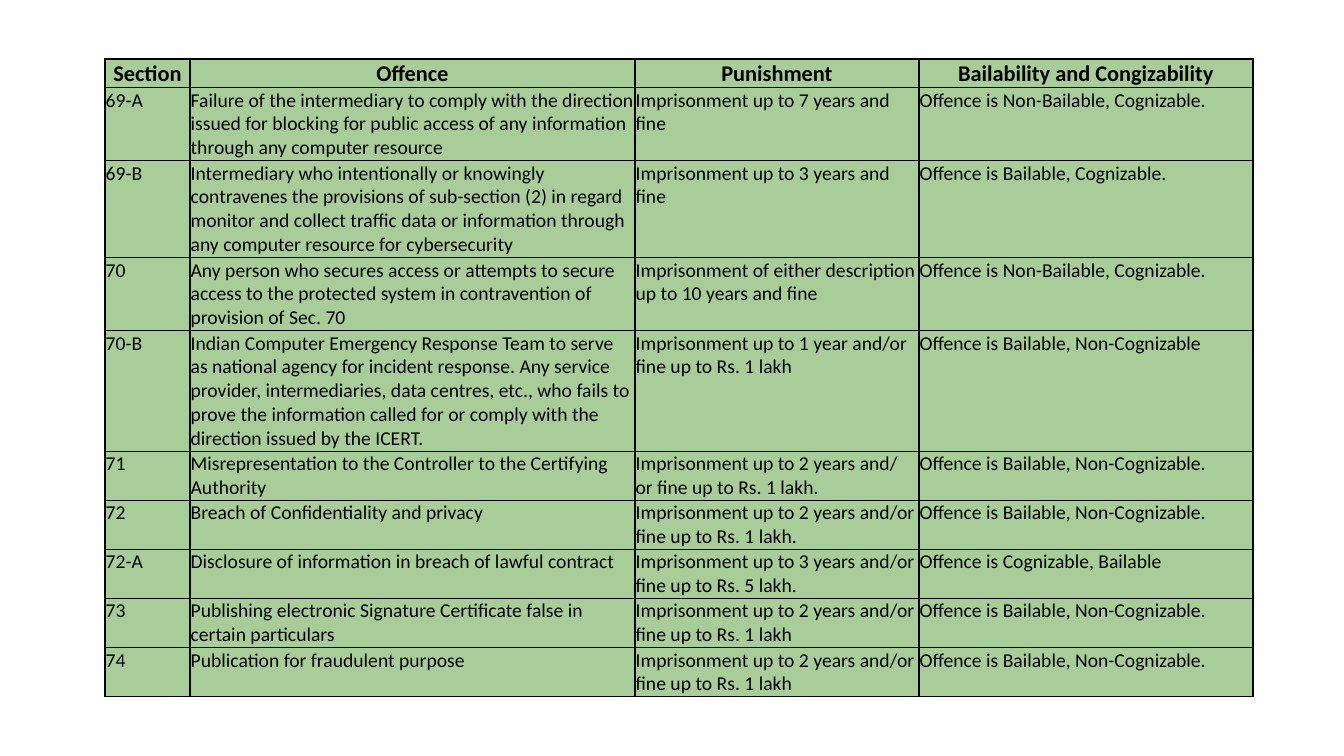
from dataclasses import dataclass

from lxml.etree import SubElement
from pptx import Presentation
from pptx.dml.color import RGBColor
from pptx.enum.text import PP_ALIGN as Align
from pptx.oxml.ns import qn
from pptx.util import Emu, Pt


@dataclass(frozen=True)
class Theme:
    font: str = "Calibri"
    header_size: int = 16
    body_size: int = 14
    text: str = "000000"
    fill: str = "A9CD98"
    border: str = "000000"
    border_width: int = 1
    inset: float = 0.5


THEME = Theme()
EMU_PER_PX = 914400 / 100.8

COLUMN_WIDTHS = [85, 445, 284, 334]
ROW_HEIGHTS = [28, 73, 97, 73, 120] + [49] * 5
HEADERS = ("Section", "Offence", "Punishment", "Bailability and Congizability")
OFFENCES = [
    ("69-A",
     "Failure of the intermediary to comply with the direction issued for blocking "
     "for public access of any information through any computer resource",
     "Imprisonment up to 7 years and fine",
     "Offence is Non-Bailable, Cognizable."),
    ("69-B",
     "Intermediary who intentionally or knowingly contravenes the provisions of "
     "sub-section (2) in regard monitor and collect traffic data or information "
     "through any computer resource for cybersecurity",
     "Imprisonment up to 3 years and fine",
     "Offence is Bailable, Cognizable."),
    ("70",
     "Any person who secures access or attempts to secure access to the protected "
     "system in contravention of provision of Sec. 70",
     "Imprisonment of either description up to 10 years and fine",
     "Offence is Non-Bailable, Cognizable."),
    ("70-B",
     "Indian Computer Emergency Response Team to serve as national agency for "
     "incident response. Any service provider, intermediaries, data centres, etc., "
     "who fails to prove the information called for or comply with the direction "
     "issued by the ICERT.",
     "Imprisonment up to 1 year and/or fine up to Rs. 1 lakh",
     "Offence is Bailable, Non-Cognizable"),
    ("71",
     "Misrepresentation to the Controller to the Certifying Authority",
     "Imprisonment up to 2 years and/ or fine up to Rs. 1 lakh.",
     "Offence is Bailable, Non-Cognizable."),
    ("72",
     "Breach of Confidentiality and privacy",
     "Imprisonment up to 2 years and/or fine up to Rs. 1 lakh.",
     "Offence is Bailable, Non-Cognizable."),
    ("72-A",
     "Disclosure of information in breach of lawful contract",
     "Imprisonment up to 3 years and/or fine up to Rs. 5 lakh.",
     "Offence is Cognizable, Bailable"),
    ("73",
     "Publishing electronic Signature Certificate false in certain particulars",
     "Imprisonment up to 2 years and/or fine up to Rs. 1 lakh",
     "Offence is Bailable, Non-Cognizable."),
    ("74",
     "Publication for fraudulent purpose",
     "Imprisonment up to 2 years and/or fine up to Rs. 1 lakh",
     "Offence is Bailable, Non-Cognizable."),
]


def px(length):
    return Emu(round(length * EMU_PER_PX))


def add_borders(cell):
    """Draw all four sides; must run before the fill, which follows them in the XML."""
    properties = cell._tc.get_or_add_tcPr()
    for side in ("a:lnL", "a:lnR", "a:lnT", "a:lnB"):
        line = SubElement(properties, qn(side), w=str(Pt(THEME.border_width)))
        solid = SubElement(line, qn("a:solidFill"))
        SubElement(solid, qn("a:srgbClr"), val=THEME.border)


def fill_cell(cell, text, is_header):
    add_borders(cell)
    cell.fill.solid()
    cell.fill.fore_color.rgb = RGBColor.from_string(THEME.fill)
    cell.margin_left = cell.margin_right = Pt(THEME.inset)
    cell.margin_top = cell.margin_bottom = Pt(THEME.inset)
    cell.text = text
    paragraph = cell.text_frame.paragraphs[0]
    paragraph.alignment = Align.CENTER if is_header else Align.LEFT
    font = paragraph.font
    font.name = THEME.font
    font.size = Pt(THEME.header_size if is_header else THEME.body_size)
    font.bold = is_header
    font.color.rgb = RGBColor.from_string(THEME.text)


def add_offence_table(slide, left, top):
    rows = [HEADERS, *OFFENCES]
    frame = slide.shapes.add_table(
        len(rows), len(HEADERS), px(left), px(top),
        px(sum(COLUMN_WIDTHS)), px(sum(ROW_HEIGHTS)))
    table = frame.table
    table.horz_banding = False
    for column, width in zip(table.columns, COLUMN_WIDTHS):
        column.width = px(width)
    for index, (row, height, texts) in enumerate(zip(table.rows, ROW_HEIGHTS, rows)):
        row.height = px(height)
        for cell, text in zip(row.cells, texts):
            fill_cell(cell, text, is_header=index == 0)


def main():
    presentation = Presentation()
    presentation.slide_width, presentation.slide_height = px(1344), px(756)
    slide = presentation.slides.add_slide(presentation.slide_layouts[6])
    add_offence_table(slide, 105, 59)
    presentation.save("out.pptx")


if __name__ == "__main__":
    main()
